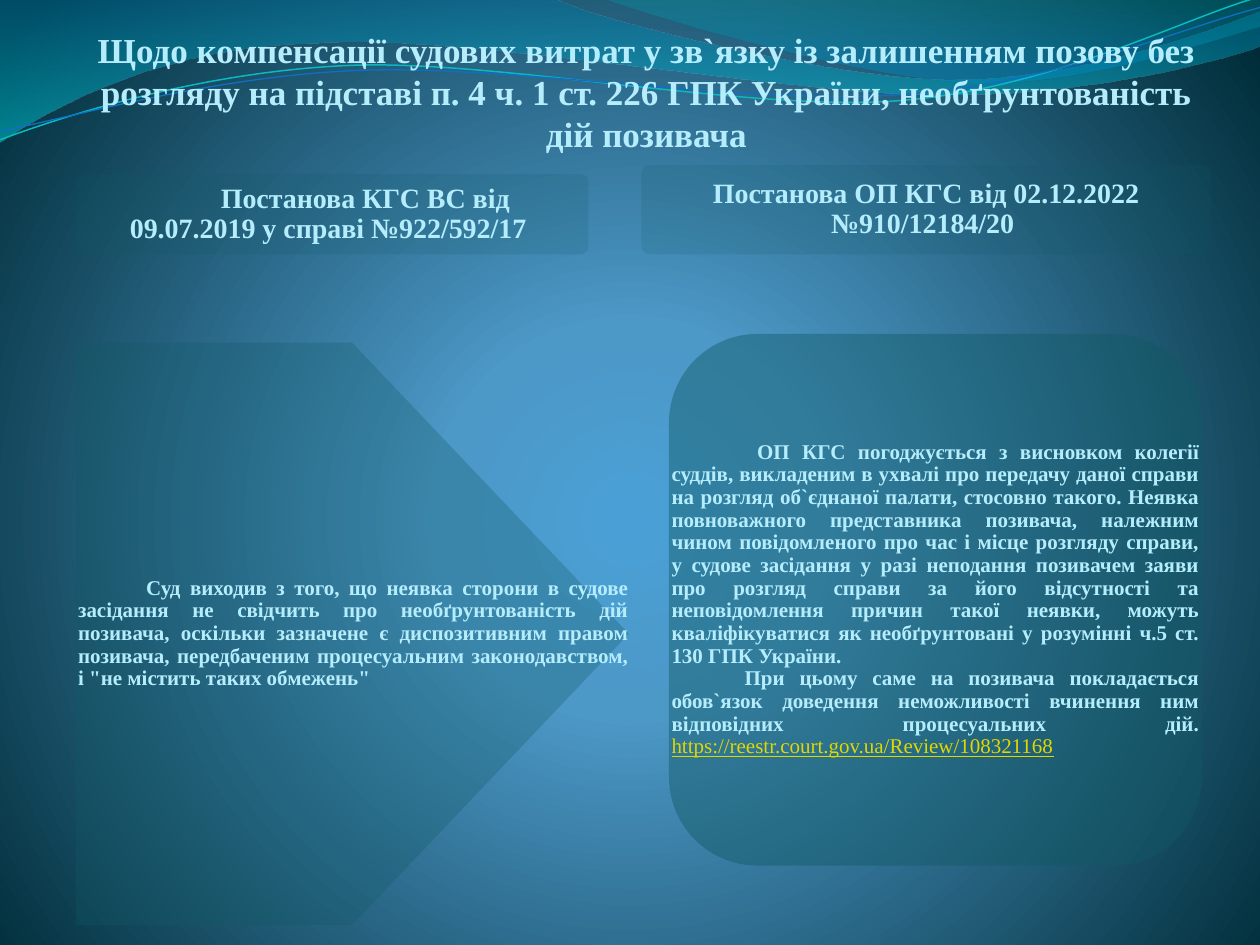
"""Build a slide comparing two court rulings on compensation of legal costs."""
from dataclasses import dataclass
from lxml.etree import SubElement
from pptx import Presentation
from pptx.dml.color import RGBColor
from pptx.enum.shapes import MSO_SHAPE as Shape
from pptx.enum.text import MSO_ANCHOR as Anchor, MSO_AUTO_SIZE as AutoSize, PP_ALIGN as Align
from pptx.oxml.ns import qn
from pptx.util import Inches, Pt


@dataclass(frozen=True)
class Theme:
    font: str = "Times New Roman"
    text: str = "B5EDFD"
    link: str = "E2D700"
    panel: str = "115964"
    background: tuple = ((0, "4AA0D6", 100), (25, "4C98C7", 100), (100, "002C38", 100))
    wide_wave: tuple = ((0, "0074A1", 45), (100, "00C6CF", 55))
    short_wave: tuple = ((0, "00A1A9", 30), (80, "008BBF", 45))
    teal_line: str = "0AB8BF"
    blue_line: str = "0F6FC6"
    title_size: int = 20
    header_size: int = 16
    body_size: int = 12


theme = Theme()


def set_gradient(element, stops, centre=None):
    gradient = element.find(".//" + qn("a:gradFill"))
    for child in list(gradient):
        gradient.remove(child)
    stop_list = SubElement(gradient, qn("a:gsLst"))
    for position, colour, opacity in stops:
        stop = SubElement(stop_list, qn("a:gs"), pos=str(position * 1000))
        tint = SubElement(stop, qn("a:srgbClr"), val=colour)
        SubElement(tint, qn("a:alpha"), val=str(opacity * 1000))
    if centre:
        circle = SubElement(gradient, qn("a:path"), {"path": "circle"})
        SubElement(circle, qn("a:fillToRect"), centre)
    else:
        SubElement(gradient, qn("a:lin"), ang="5400000", scaled="0")


def add_text(para, text, size, colour=theme.text, is_link=False):
    span = para.add_run()
    span.text = text
    span.font.name = theme.font
    span.font.size = Pt(size)
    span.font.bold = not is_link
    span.font.underline = is_link
    span.font.color.rgb = RGBColor.from_string(colour)


deck = Presentation()
deck.slide_width, deck.slide_height = Inches(10), Inches(7.5)
page = deck.slides.add_slide(deck.slide_layouts[5])
page.background.fill.gradient()
set_gradient(page.element, theme.background,
             {"l": "10000", "t": "110000", "r": "10000", "b": "100000"})

waves = [
    ([(0, 0), (4.4, -0.01), (4.76, 0.17, 6.64, 0.63, 7.58, 0.63),
      (8.53, 0.63, 9.58, 0.26, 10, 0.09), (10.01, 0.36),
      (9.83, 0.44, 8.7, 0.76, 7.46, 0.75), (6.22, 0.75, 3.82, 0.28, 2.57, 0.34),
      (1.29, 0.36, 0.46, 0.83, -0.01, 1.13)], theme.wide_wave, None, 0),
    ([(4.79, -0.01), (5.09, 0.11, 6.82, 0.62, 7.69, 0.65),
      (8.56, 0.69, 9.61, 0.32, 10, 0.21), (10, 0)], theme.short_wave, None, 0),
    ([(0, 1.11), (0.48, 0.93, 1.58, 0.57, 2.77, 0.52), (3.95, 0.47, 5.93, 0.89, 7.13, 0.8),
      (8.33, 0.71, 9.38, 0.15, 9.98, -0.02)], None, theme.teal_line, 0.85),
    ([(0, 1.04), (0.47, 0.96, 1.64, 0.61, 2.83, 0.56), (4.03, 0.51, 5.97, 0.84, 7.17, 0.75),
      (8.36, 0.67, 9.41, 0.21, 10, 0.06)], None, theme.blue_line, 0.75),
]
master_tree = deck.slide_master.element.find(".//" + qn("p:spTree"))
for number, (segments, stops, line_colour, line_width) in enumerate(waves):
    ends = [(Inches(segment[-2]), Inches(segment[-1])) for segment in segments]
    builder = page.shapes.build_freeform(*ends[0])
    builder.add_line_segments(ends[1:], close=stops is not None)
    wave = builder.convert_to_shape()
    wave.shadow.inherit = False
    for segment, line in zip(segments[1:], wave.element.findall(".//" + qn("a:lnTo"))):
        if len(segment) == 6:
            curve = SubElement(line.getparent(), qn("a:cubicBezTo"))
            for x, y in zip(segment[::2], segment[1::2]):
                SubElement(curve, qn("a:pt"), x=str(Inches(x) - wave.left),
                           y=str(Inches(y) - wave.top))
            line.getparent().replace(line, curve)
    if stops:
        wave.fill.gradient()
        set_gradient(wave.element, stops)
        wave.line.fill.background()
    else:
        wave.fill.background()
        wave.line.color.rgb = RGBColor.from_string(line_colour)
        wave.line.width = Pt(line_width)
    wave.element.find(".//" + qn("p:cNvPr")).set("id", str(20 + number))
    master_tree.append(wave.element)

title = page.shapes.title
title.left, title.top, title.width, title.height = map(Inches, (0.67, 0.36, 8.94, 0.87))
frame = title.text_frame
frame.word_wrap = True
frame.auto_size = AutoSize.NONE
frame.vertical_anchor = Anchor.BOTTOM
frame.margin_left = frame.margin_top = frame.margin_bottom = 0
frame.margin_right = Inches(0.02)
frame.paragraphs[0].alignment = Align.CENTER
add_text(frame.paragraphs[0],
         "Щодо компенсації судових витрат у зв`язку із залишенням позову без розгляду на підставі "
         "п. 4 ч. 1 ст. 226 ГПК України, необґрунтованість дій позивача", theme.title_size)

panels = [
    (Shape.PENTAGON, (0.6, 2.72, 4.39, 4.62), 29, (0.02, 0.01, 0, 0.01), Align.JUSTIFY,
     theme.body_size, [
        (0.54, "Суд виходив з того, що неявка сторони в судове засідання не свідчить про "
               "необґрунтованість дій позивача, оскільки зазначене є диспозитивним правом позивача, "
               "передбаченим процесуальним законодавством, і \"не містить таких обмежень\"", "")]),
    (Shape.FLOWCHART_ALTERNATE_PROCESS, (5.31, 2.65, 4.23, 4.22), 44, (0.02,) * 4, Align.JUSTIFY,
     theme.body_size, [
        (0.68, "ОП КГС погоджується з висновком колегії суддів, викладеним в ухвалі про передачу "
               "даної справи на розгляд об`єднаної палати, стосовно такого. Неявка повноважного "
               "представника позивача, належним чином повідомленого про час і місце розгляду справи, "
               "у судове засідання у разі неподання позивачем заяви про розгляд справи за його "
               "відсутності та неповідомлення причин такої неявки, можуть кваліфікуватися як "
               "необґрунтовані у розумінні ч.5 ст. 130 ГПК України.", ""),
        (0.58, "При цьому саме на позивача покладається обов`язок доведення неможливості вчинення "
               "ним відповідних процесуальних дій. ",
         "https://reestr.court.gov.ua/Review/108321168")]),
    (Shape.ROUNDED_RECTANGLE, (0.6, 1.38, 4.07, 0.64), 17, (0.05, 0.05, 0.11, 0.05), Align.CENTER,
     theme.header_size, [(0.59, "Постанова КГС ВС від 09.07.2019 у справі №922/592/17", "")]),
    (Shape.ROUNDED_RECTANGLE, (5.09, 1.31, 4.52, 0.71), 16, (0.07,) * 4, Align.CENTER,
     theme.header_size, [(0, "Постанова ОП КГС від 02.12.2022 №910/12184/20 ", "")]),
]
for kind, place, opacity, insets, alignment, size, paragraphs in panels:
    area = [Inches(value) for value in place]
    panel = page.shapes.add_shape(kind, *area)
    panel.shadow.inherit = False
    if kind == Shape.ROUNDED_RECTANGLE:
        panel.adjustments[0] = 0.1
    panel.fill.solid()
    panel.fill.fore_color.rgb = RGBColor.from_string(theme.panel)
    panel.line.fill.background()
    tint = panel.element.find(".//" + qn("a:srgbClr"))
    SubElement(tint, qn("a:alpha"), val=str(opacity * 1000))

    box = page.shapes.add_textbox(*area)
    frame = box.text_frame
    frame.word_wrap = True
    frame.vertical_anchor = Anchor.MIDDLE
    frame.margin_left, frame.margin_top, frame.margin_right, frame.margin_bottom = map(Inches, insets)
    for index, (indent, text, link) in enumerate(paragraphs):
        para = frame.add_paragraph() if index else frame.paragraphs[0]
        para.alignment = alignment
        para.line_spacing = 0.9
        box.element.findall(".//" + qn("a:pPr"))[index].set("indent", str(Inches(indent)))
        add_text(para, text, size)
        if link:
            add_text(para, link, size, theme.link, is_link=True)

deck.save("out.pptx")
